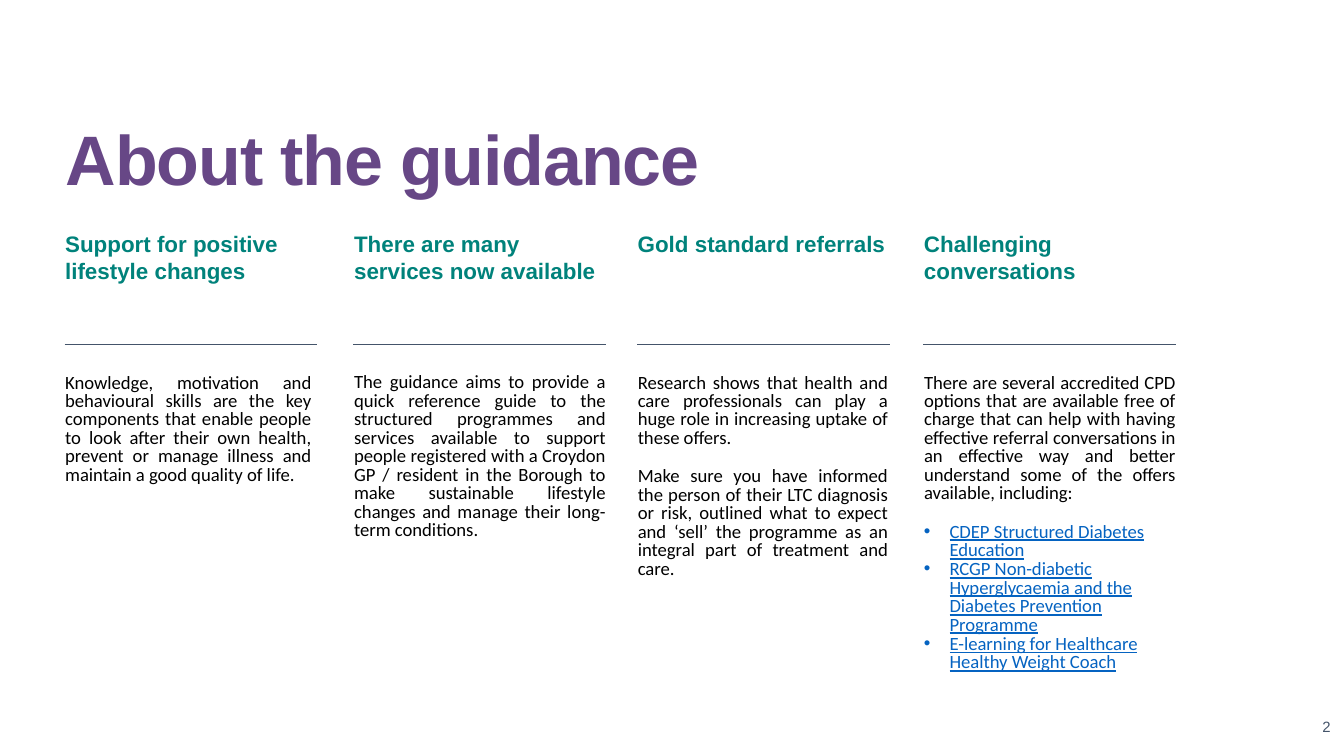
from lxml import etree
from pptx import Presentation
from pptx.dml.color import RGBColor
from pptx.enum.shapes import MSO_CONNECTOR
from pptx.enum.text import MSO_ANCHOR, PP_ALIGN
from pptx.oxml.ns import qn
from pptx.util import Pt

SCALE = 4572
STRAIGHT = MSO_CONNECTOR.STRAIGHT
MIDDLE = MSO_ANCHOR.MIDDLE
LEFT, RIGHT, JUSTIFY = PP_ALIGN.LEFT, PP_ALIGN.RIGHT, PP_ALIGN.JUSTIFY
PURPLE, TEAL, SLATE, BLACK, BLUE = "674786", "00827B", "44546A", "000000", "0563C1"
HEADING_TOP, RULE_TOP, BODY_TOP, RULE_WIDTH = 341, 512, 555, 376
LINE_HEIGHT, LINE_GAP = 9.9, 0.4
BLANK_LINE = LINE_HEIGHT + 2 * LINE_GAP

COLUMNS = [
    (96, 376, 170, "Support for positive lifestyle changes", [
        "Knowledge, motivation and behavioural skills are the key components that enable "
        "people to look after their own health, prevent or manage illness and maintain a "
        "good quality of life."], []),
    (526, 384, 254, "There are many services now available", [
        "The guidance aims to provide a quick reference guide to the structured programmes "
        "and services available to support people registered with a Croydon GP / resident in "
        "the Borough to make sustainable lifestyle changes and manage their long-term "
        "conditions."], []),
    (948, 382, 310, "Gold standard referrals", [
        "Research shows that health and care professionals can play a huge role in "
        "increasing uptake of these offers.",
        "Make sure you have informed the person of their LTC diagnosis or risk, outlined what "
        "to expect and ‘sell’ the programme as an integral part of treatment and care."], []),
    (1374, 384, 450, "Challenging conversations", [
        "There are several accredited CPD options that are available free of charge that can "
        "help with having effective referral conversations in an effective way and better "
        "understand some of the offers available, including:"], [
        "CDEP Structured Diabetes Education",
        "RCGP Non-diabetic Hyperglycaemia and the Diabetes Prevention Programme",
        "E-learning for Healthcare Healthy Weight Coach"]),
]


def px(length):
    """Turn px into EMU."""
    return length * SCALE


def rgb(color):
    """Turn a hex string into a colour."""
    return RGBColor.from_string(color)


def add_box(page, left, top, width, height, margins=(0, 2, 0, 0)):
    """Add a wrapping text box and return its text frame."""
    frame = page.shapes.add_textbox(px(left), px(top), px(width), px(height)).text_frame
    frame.word_wrap = True
    (frame.margin_left, frame.margin_top,
     frame.margin_right, frame.margin_bottom) = map(px, margins)
    return frame


def set_indent(para, left, first=0, right=0):
    """Set the side margins and first-line indent of a paragraph."""
    properties = para._p.get_or_add_pPr()
    for name, length in (("marL", left), ("marR", right), ("indent", first)):
        properties.set(name, str(px(length)))
    return properties


def style(para, text, size, font, color, bold=False, align=LEFT):
    """Write text into a paragraph and format it."""
    span = para.add_run()
    span.text = text
    para.alignment = align
    para.font.size = Pt(size)
    para.font.name = font
    para.font.bold = bold
    para.font.color.rgb = rgb(color)
    return span


def add_title(page):
    """Add the tightly spaced slide title."""
    para = add_box(page, 97, 170, 992, 128).paragraphs[0]
    set_indent(para, 1)
    span = style(para, "About the guidance", 37.5, "Arial", PURPLE, bold=True)
    span._r.get_or_add_rPr().set("spc", "-65")


def add_heading(page, left, text):
    """Add a column heading."""
    para = add_box(page, left, HEADING_TOP, 388, 82).paragraphs[0]
    set_indent(para, 1)
    style(para, text, 12, "Arial", TEAL, bold=True)


def add_rule(page, left):
    """Add the thin line under a column heading."""
    rule = page.shapes.add_connector(
        STRAIGHT, px(left), px(RULE_TOP), px(left + RULE_WIDTH), px(RULE_TOP))
    rule.line.color.rgb = rgb(SLATE)
    rule.line.width = Pt(0.5)
    etree.SubElement(rule._element.spPr, qn("a:effectLst"))


def add_body(page, left, width, height, texts, bullets):
    """Add justified paragraphs followed by an underlined bullet list."""
    frame = add_box(page, left, BODY_TOP, width, height)
    for index, text in enumerate(texts + bullets):
        para = frame.add_paragraph() if index else frame.paragraphs[0]
        para.line_spacing = Pt(LINE_HEIGHT)
        if index:
            para.space_before = Pt(BLANK_LINE if index <= len(texts) else LINE_GAP)
        if index < len(texts):
            set_indent(para, 1, right=9)
            style(para, text, 10, "Calibri", BLACK, align=JUSTIFY)
        else:
            properties = set_indent(para, 39, first=-38)
            etree.SubElement(properties, qn("a:buFont"), typeface="Arial")
            etree.SubElement(properties, qn("a:buChar"), char="•")
            style(para, text, 10, "Calibri", BLUE)
            para.font.underline = True


def add_page_number(page):
    """Add the page number in the bottom right corner."""
    frame = add_box(page, 1526, 1038, 474, 87, margins=(20, 10, 20, 10))
    frame.vertical_anchor = MIDDLE
    style(frame.paragraphs[0], "2", 8, "Arial", SLATE, align=RIGHT)


def main():
    """Build and save the slide."""
    deck = Presentation()
    deck.slide_width, deck.slide_height = px(2000), px(1125)
    page = deck.slides.add_slide(deck.slide_layouts[6])
    add_title(page)
    for left, width, height, heading, texts, bullets in COLUMNS:
        add_heading(page, left, heading)
        add_rule(page, left)
        add_body(page, left, width, height, texts, bullets)
    add_page_number(page)
    deck.save("out.pptx")


if __name__ == "__main__":
    main()
